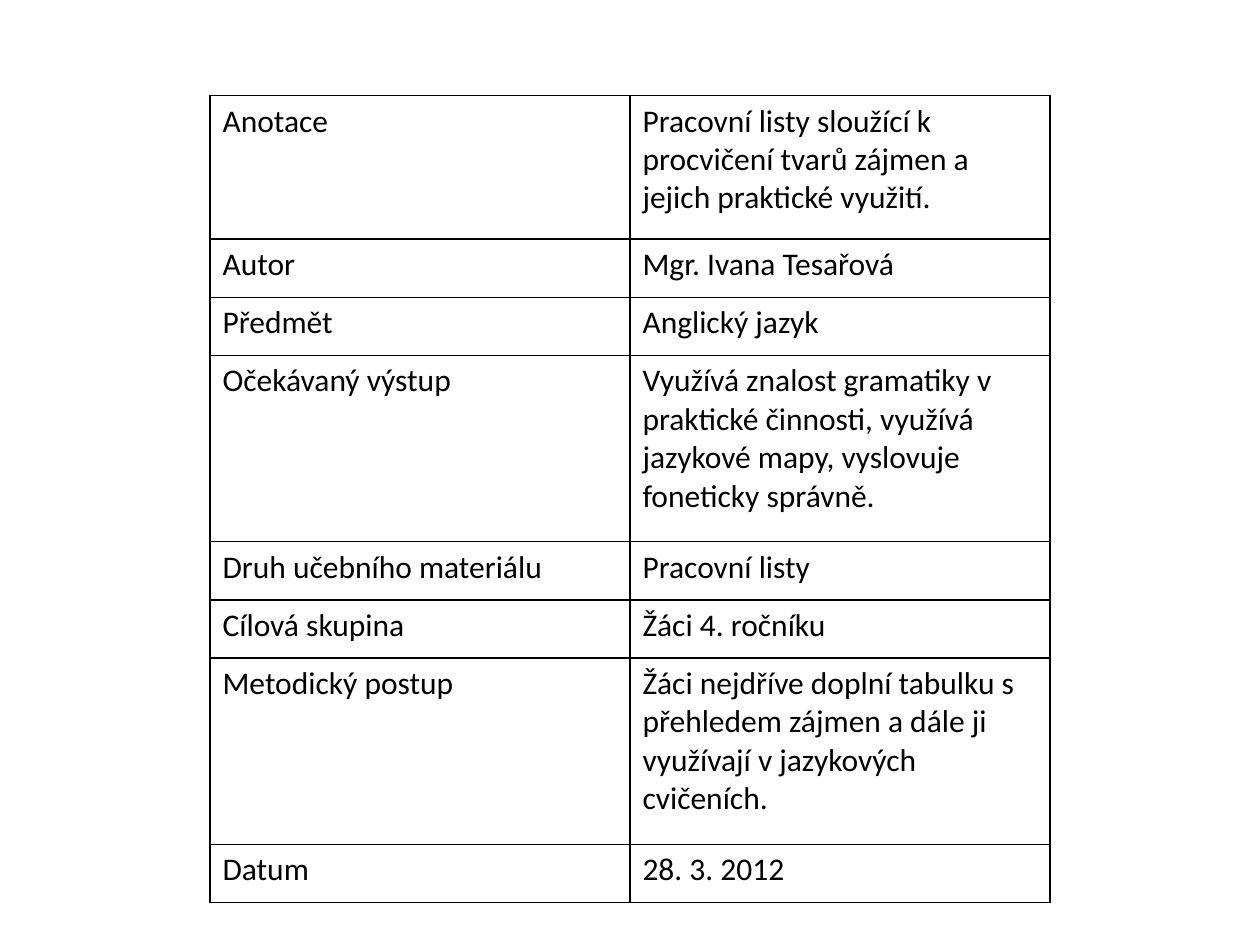
from lxml import etree
from pptx import Presentation
from pptx.dml.color import RGBColor
from pptx.oxml.ns import qn
from pptx.util import Pt

COLORS = {"ink": "000000", "paper": "FFFFFF"}
FONT = "Calibri"
BLANK_LAYOUT = 6
SHORT_ROW, ANNOTATION_ROW, LONG_ROW = 33.2, 82, 106.5

LESSON_DETAILS = [
    ("Anotace", "Pracovní listy sloužící k procvičení tvarů zájmen a jejich praktické využití.", ANNOTATION_ROW),
    ("Autor", "Mgr. Ivana Tesařová", SHORT_ROW),
    ("Předmět", "Anglický jazyk", SHORT_ROW),
    ("Očekávaný výstup", "Využívá znalost gramatiky v praktické činnosti, využívá jazykové mapy, "
                         "vyslovuje foneticky správně.", LONG_ROW),
    ("Druh učebního materiálu", "Pracovní listy", SHORT_ROW),
    ("Cílová skupina", "Žáci 4. ročníku", SHORT_ROW),
    ("Metodický postup", "Žáci nejdříve doplní tabulku s přehledem zájmen a dále ji využívají "
                         "v jazykových cvičeních.", LONG_ROW),
    ("Datum", "28. 3. 2012", SHORT_ROW),
]


def add_borders(cell, color, width):
    properties = cell._tc.get_or_add_tcPr()
    for side in ("lnL", "lnR", "lnT", "lnB"):
        line = etree.SubElement(properties, qn(f"a:{side}"), w=str(Pt(width)))
        fill = etree.SubElement(line, qn("a:solidFill"))
        etree.SubElement(fill, qn("a:srgbClr"), val=color)


def fill_cell(cell, text):
    add_borders(cell, COLORS["ink"], 1)
    cell.fill.solid()
    cell.fill.fore_color.rgb = RGBColor.from_string(COLORS["paper"])
    cell.text_frame.text = text
    font = cell.text_frame.paragraphs[0].runs[0].font
    font.name = FONT
    font.size = Pt(18)
    font.bold = False
    font.color.rgb = RGBColor.from_string(COLORS["ink"])


def add_details_table(slide, left, top, width):
    height = sum(row_height for _, _, row_height in LESSON_DETAILS)
    table = slide.shapes.add_table(
        len(LESSON_DETAILS), 2, Pt(left), Pt(top), Pt(width), Pt(height)
    ).table
    table.first_row = False
    table.horz_banding = False
    for column in table.columns:
        column.width = Pt(width / 2)
    for row, (label, detail, row_height) in zip(table.rows, LESSON_DETAILS):
        row.height = Pt(row_height)
        for cell, text in zip(row.cells, (label, detail)):
            fill_cell(cell, text)


def main():
    presentation = Presentation()
    presentation.slide_width = Pt(720)
    presentation.slide_height = Pt(540)
    slide = presentation.slides.add_slide(presentation.slide_layouts[BLANK_LAYOUT])
    add_details_table(slide, left=120, top=54.7, width=480)
    presentation.save("out.pptx")


if __name__ == "__main__":
    main()
